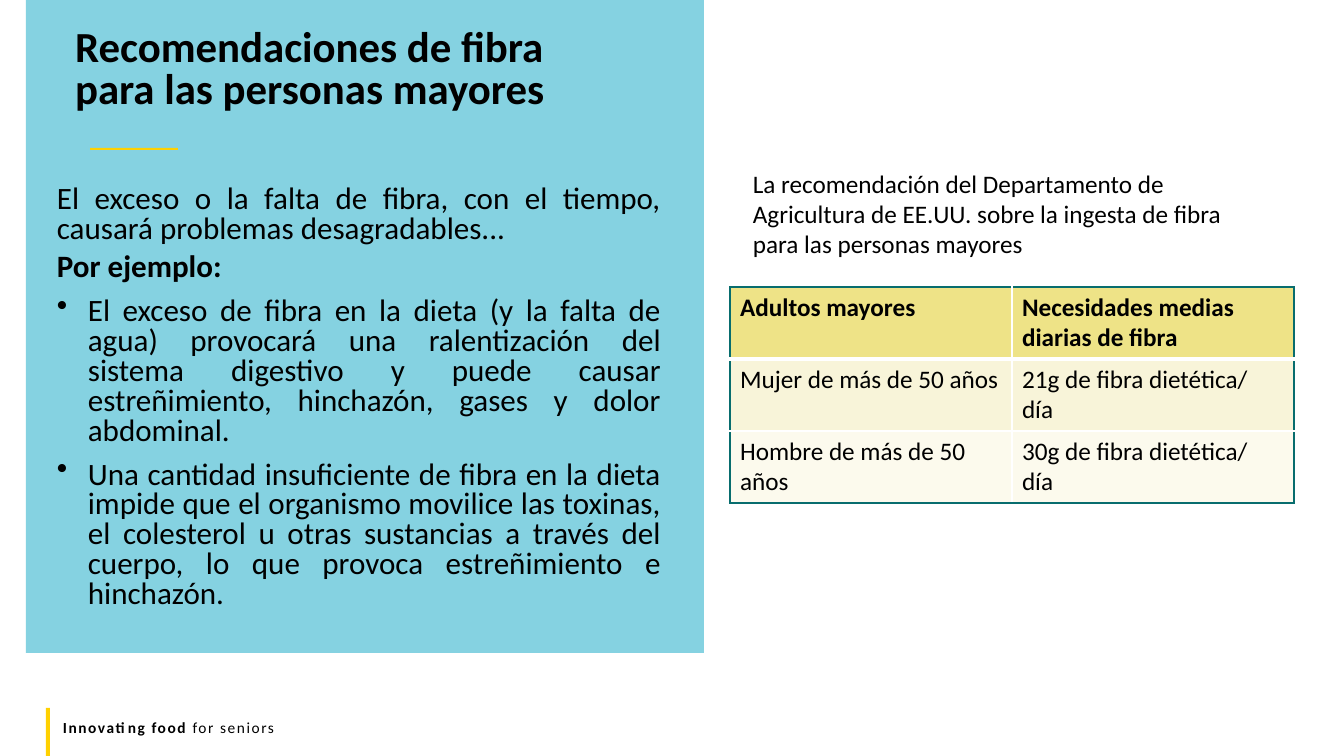
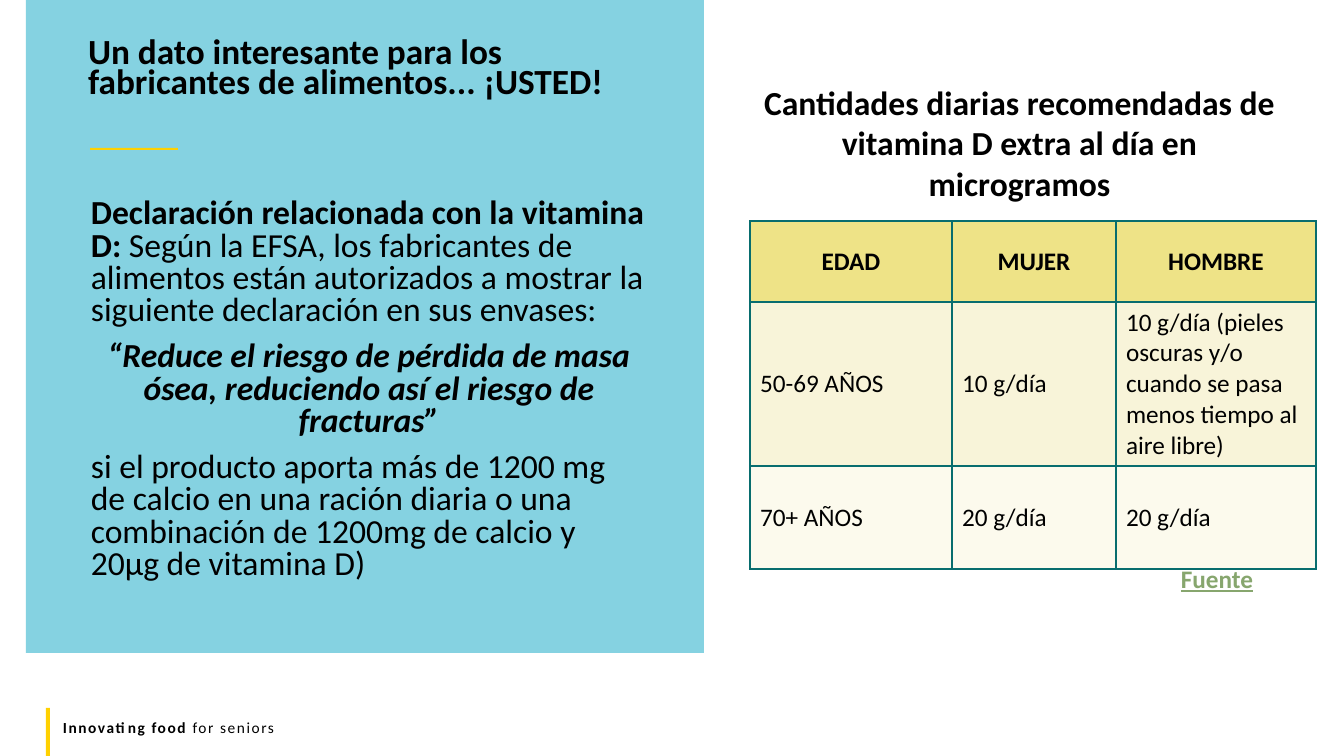
"""Build two slides on fibre and vitamin D recommendations for older adults."""
from dataclasses import dataclass

from lxml.etree import SubElement
from pptx import Presentation
from pptx.dml.color import RGBColor
from pptx.enum.shapes import MSO_SHAPE
from pptx.enum.text import MSO_ANCHOR, MSO_AUTO_SIZE, PP_ALIGN
from pptx.oxml import parse_xml
from pptx.oxml.ns import nsdecls, qn
from pptx.util import Emu, Pt

BLACK = RGBColor(0x00, 0x00, 0x00)
WHITE = RGBColor(0xFF, 0xFF, 0xFF)
AQUA = RGBColor(0x85, 0xD2, 0xE1)
YELLOW = RGBColor(0xFF, 0xD1, 0x00)
TEAL = RGBColor(0x08, 0x6D, 0x6E)
GREEN = RGBColor(0x87, 0xA6, 0x6E)
ROW_FILLS = (
    RGBColor(0xEE, 0xE3, 0x87),
    RGBColor(0xF8, 0xF4, 0xD9),
    RGBColor(0xFC, 0xFA, 0xED),
)
FONT = "Calibri"


def px(length):
    """Turn pixels into EMU at 100.8 pixels to the inch."""
    return Emu(round(length * 914400 / 100.8))


@dataclass
class Para:
    """A paragraph: bold lead-in, text and formatting."""

    text: str
    lead: str = ""
    bold: bool = False
    italic: bool = False
    underline: bool = False
    color: RGBColor = BLACK
    align: PP_ALIGN = PP_ALIGN.LEFT
    before: int = 0
    spacing: float = 1.0
    indent: int = 0
    bullet: bool = False
    tracking: int = 0


class Deck:
    """Holds the presentation, the shared style and the current page."""

    def __init__(self):
        """Start an empty widescreen deck."""
        self.deck = Presentation()
        self.deck.slide_width, self.deck.slide_height = px(1344), px(756)
        self.page = None

    def add_page(self, title, left, top, width, size, spacing):
        """Add a page with panel, accent, footer and title."""
        self.page = self.deck.slides.add_slide(self.deck.slide_layouts[5])
        self.band(26, 0, 678, 653, AQUA)
        self.band(90, 148, 88, 2, YELLOW)
        self.band(46, 708, 4, 48, YELLOW)
        footer = Para("for seniors", lead="Innovating food ", tracking=110)
        self.text(53, 713, 1210, 29, [footer], 11)
        holder = self.page.shapes.title
        self.page.shapes._spTree.append(holder._element)
        holder.left, holder.top = px(left), px(top)
        holder.width, holder.height = px(width), px(110)
        self.fill_frame(holder.text_frame,
                        [Para(title, bold=True, spacing=spacing)], size)

    def band(self, left, top, width, height, color):
        """Draw a plain filled rectangle."""
        band = self.page.shapes.add_shape(
            MSO_SHAPE.RECTANGLE, px(left), px(top), px(width), px(height))
        band.shadow.inherit = False
        band.fill.solid()
        band.fill.fore_color.rgb = color
        band.line.fill.background()

    def text(self, left, top, width, height, paras, size):
        """Add a wrapped text box."""
        box = self.page.shapes.add_textbox(px(left), px(top), px(width), px(height))
        self.fill_frame(box.text_frame, paras, size)

    def fill_frame(self, frame, paras, size):
        """Fill a top-anchored text frame with paragraphs."""
        frame.word_wrap = True
        frame.auto_size = MSO_AUTO_SIZE.NONE
        frame.vertical_anchor = MSO_ANCHOR.TOP
        for index, para in enumerate(paras):
            target = frame.add_paragraph() if index else frame.paragraphs[0]
            self.paragraph(target, para, size)

    def paragraph(self, target, para, size):
        """Fill and format one paragraph."""
        target.alignment = para.align
        target.line_spacing = para.spacing
        target.space_before = Pt(para.before)
        properties = target._p.get_or_add_pPr()
        if para.indent:
            properties.set("marL", str(px(para.indent)))
            properties.set("indent", str(-px(para.indent) if para.bullet else 0))
        if para.bullet:
            SubElement(properties, qn("a:buChar")).set("char", "•")
        font = target.font
        font.name, font.size = FONT, Pt(size)
        font.bold, font.italic, font.underline = para.bold, para.italic, para.underline
        font.color.rgb = para.color
        for words in filter(None, (para.lead, para.text)):
            span = target.add_run()
            span.text = words
            if para.lead:
                span.font.bold = words == para.lead
            if para.tracking:
                span._r.get_or_add_rPr().set("spc", str(para.tracking))

    def table(self, left, top, widths, heights, rows, edges, anchor, head_align):
        """Add a table whose edges rule gives each cell's borders."""
        table = self.page.shapes.add_table(
            len(rows), len(widths), px(left), px(top),
            px(sum(widths)), px(sum(heights))).table
        for column, width in zip(table.columns, widths):
            column.width = px(width)
        for row, height in zip(table.rows, heights):
            row.height = px(height)
        for r, words in enumerate(rows):
            for c, text in enumerate(words):
                cell = table.cell(r, c)
                cell.vertical_anchor = anchor
                cell.fill.solid()
                cell.fill.fore_color.rgb = ROW_FILLS[r]
                align = PP_ALIGN.LEFT if r else head_align
                self.paragraph(cell.text_frame.paragraphs[0],
                               Para(text, bold=r == 0, align=align), 18)
                self.borders(cell, edges(r, c, len(rows) - 1, len(widths) - 1))

    def borders(self, cell, edges):
        """Set the left, right, top and bottom borders of a cell."""
        properties = cell._tc.get_or_add_tcPr()
        for index, (side, (color, points)) in enumerate(zip("LRTB", edges)):
            properties.insert(index, parse_xml(
                f'<a:ln{side} {nsdecls("a")} w="{int(Pt(points))}"><a:solidFill>'
                f'<a:srgbClr val="{color}"/></a:solidFill></a:ln{side}>'))


def framed(row, column, last_row, last_column):
    """Give teal outer edges, white inner ones and a thick rule under the head."""
    outer, inner, thick = (TEAL, 1), (WHITE, 1), (WHITE, 3)
    return (
        inner if column else outer,
        inner if column < last_column else outer,
        (outer, thick, inner)[min(row, 2)],
        thick if row == 0 else inner if row < last_row else outer,
    )


def gridded(row, column, last_row, last_column):
    """Give teal edges everywhere."""
    return ((TEAL, 1),) * 4


def fibre_page(deck):
    """Build the fibre page."""
    deck.add_page("Recomendaciones de fibra para las personas mayores",
                  65, 25, 518, 30.6, 0.8)
    body = {"align": PP_ALIGN.JUSTIFY, "spacing": 0.8}
    point = {**body, "before": 10, "indent": 31, "bullet": True}
    deck.text(47, 181, 624, 426, [
        Para("El exceso o la falta de fibra, con el tiempo, causará problemas "
             "desagradables...", **body),
        Para("Por ejemplo:", bold=True, before=6, **body),
        Para("El exceso de fibra en la dieta (y la falta de agua) provocará una "
             "ralentización del sistema digestivo y puede causar estreñimiento, "
             "hinchazón, gases y dolor abdominal.", **point),
        Para("Una cantidad insuficiente de fibra en la dieta impide que el organismo "
             "movilice las toxinas, el colesterol u otras sustancias a través del "
             "cuerpo, lo que provoca estreñimiento e hinchazón.", **point),
    ], 22.2)
    deck.table(730, 287, [282] * 2, [72] * 3, [
        ("Adultos mayores", "Necesidades medias diarias de fibra"),
        ("Mujer de más de 50 años", "21g de fibra dietética/ día"),
        ("Hombre de más de 50 años", "30g de fibra dietética/ día"),
    ], framed, MSO_ANCHOR.TOP, PP_ALIGN.LEFT)
    deck.text(743, 163, 516, 102, [
        Para("La recomendación del Departamento de Agricultura de EE.UU. sobre la "
             "ingesta de fibra para las personas mayores")], 18)


def vitamin_page(deck):
    """Build the vitamin D page."""
    deck.add_page("Un dato interesante para los fabricantes de alimentos... ¡USTED!",
                  78, 36, 560, 25.2, 0.7)
    body = {"spacing": 0.8, "indent": 25}
    deck.text(56, 194, 601, 426, [
        Para("Según la EFSA, los fabricantes de alimentos están autorizados a mostrar "
             "la siguiente declaración en sus envases:",
             lead="Declaración relacionada con la vitamina D: ", **body),
        Para("“Reduce el riesgo de pérdida de masa ósea, reduciendo así el riesgo de "
             "fracturas”", bold=True, italic=True, align=PP_ALIGN.CENTER,
             before=10, **body),
        Para("si el producto aporta más de 1200 mg de calcio en una ración diaria o "
             "una combinación de 1200mg de calcio y 20µg de vitamina D)",
             before=10, **body),
    ], 24)
    deck.table(750, 221, [202, 164, 200], [81, 164, 103], [
        ("EDAD", "MUJER", "HOMBRE"),
        ("50-69 AÑOS", "10 g/día", "10 g/día (pieles oscuras y/o cuando se pasa "
         "menos tiempo al aire libre)"),
        ("70+ AÑOS", "20 g/día", "20 g/día"),
    ], gridded, MSO_ANCHOR.MIDDLE, PP_ALIGN.CENTER)
    deck.text(750, 77, 539, 132, [
        Para("Cantidades diarias recomendadas de vitamina D extra al día en "
             "microgramos", bold=True, align=PP_ALIGN.CENTER)], 24)
    deck.text(1171, 558, 116, 40, [
        Para("Fuente", bold=True, underline=True, color=GREEN)], 18)


def main():
    """Build and save the deck."""
    deck = Deck()
    fibre_page(deck)
    vitamin_page(deck)
    deck.deck.save("out.pptx")


if __name__ == "__main__":
    main()
